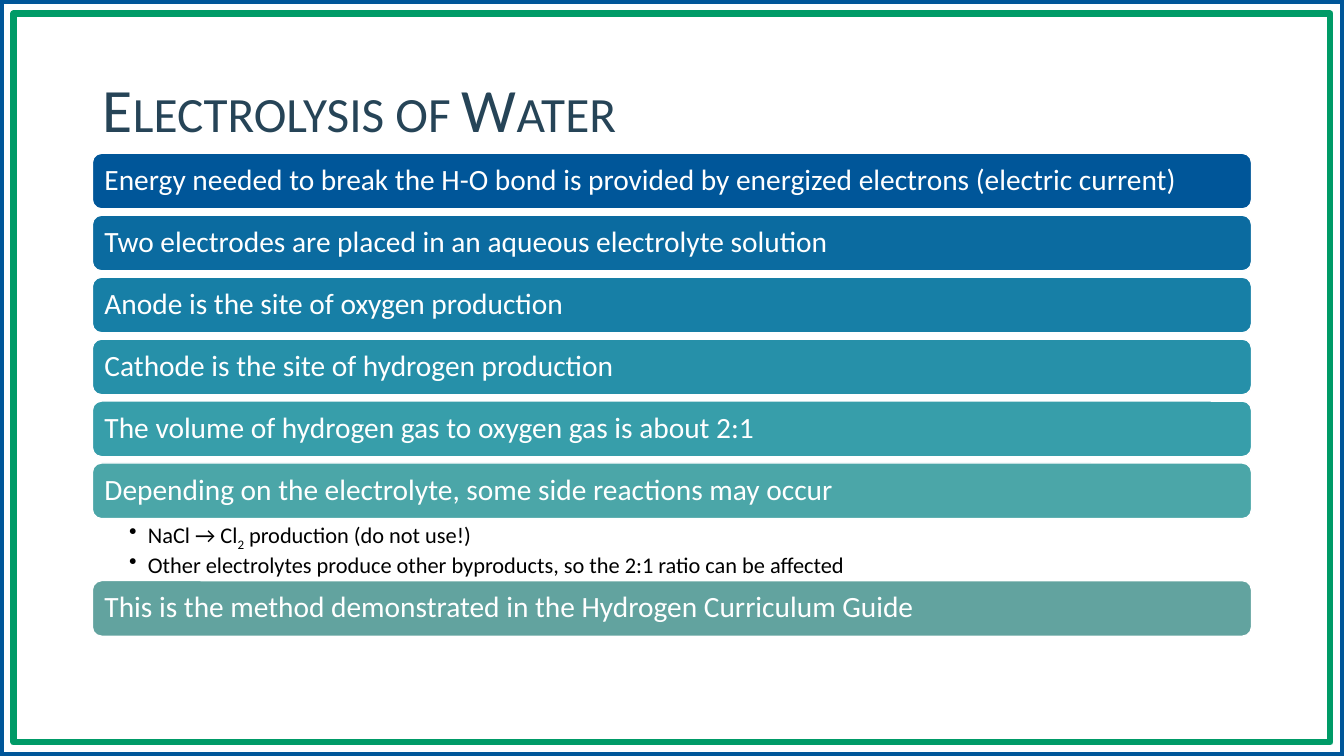
from lxml.etree import SubElement
from pptx import Presentation
from pptx.dml.color import RGBColor
from pptx.enum.shapes import MSO_SHAPE as Preset
from pptx.enum.text import MSO_ANCHOR as Anchor, MSO_AUTO_SIZE as AutoSize, PP_ALIGN as Align
from pptx.oxml.ns import qn
from pptx.util import Pt

PX = 9525
WIDTH, HEIGHT = 1280, 720
FONT = "Calibri"
BAR_HEIGHT, BAR_PITCH, BULLETS_HEIGHT = 53, 59, 59
STEPS = [
    ("Energy needed to break the H-O bond is provided by energized electrons (electric current)", "005699"),
    ("Two electrodes are placed in an aqueous electrolyte solution", "0B6BA0"),
    ("Anode is the site of oxygen production", "177FA6"),
    ("Cathode is the site of hydrogen production", "2690A9"),
    ("The volume of hydrogen gas to oxygen gas is about 2:1", "379EAA"),
    ("Depending on the electrolyte, some side reactions may occur", "4BA6A8"),
]
SIDE_REACTIONS = [
    [("NaCl → Cl", {}), ("2", {"baseline": -25000}), (" production (do not use!)", {})],
    [("Other electrolytes produce other byproducts, so the 2:1 ratio can be affected", {})],
]
CLOSING = ("This is the method demonstrated in the Hydrogen Curriculum Guide", "62A39F")


def px(*lengths):
    """Turn pixel lengths into EMU."""
    return [length * PX for length in lengths]


def color(value):
    """Turn a hex string into a colour."""
    return RGBColor.from_string(value)


def add_text(paragraph, text, size=21, fill="FFFFFF", **attributes):
    """Append a formatted run, with any extra run attributes."""
    paragraph.line_spacing = 0.9
    paragraph.alignment = Align.LEFT
    run = paragraph.add_run()
    run.text = text
    run.font.name = FONT
    run.font.size = Pt(size)
    run.font.color.rgb = color(fill)
    for name, value in attributes.items():
        run._r.get_or_add_rPr().set(name, str(value))


def set_frame(frame, insets, anchor):
    """Set wrapping, insets and anchor of a text frame."""
    frame.word_wrap = True
    frame.auto_size = AutoSize.NONE
    frame.vertical_anchor = anchor
    frame.margin_left, frame.margin_top, frame.margin_right, frame.margin_bottom = px(*insets)


def add_panel(slide, preset, box, line, line_width, fill=None):
    """Add an outlined shape, filled when a fill is given."""
    shape = slide.shapes.add_shape(preset, *px(*box))
    shape.shadow.inherit = False
    if fill:
        shape.fill.solid()
        shape.fill.fore_color.rgb = color(fill)
    else:
        shape.fill.background()
    shape.line.color.rgb = color(line)
    shape.line.width = Pt(line_width)
    return shape


def add_border(slide, box):
    """Draw the double border inside the given box."""
    left, top, width, height = box
    gap = 13
    inner = left + gap, top + gap, width - 2 * gap, height - 2 * gap
    add_panel(slide, Preset.RECTANGLE, box, "005699", 6)
    add_panel(slide, Preset.RECTANGLE, inner, "009B67", 4.5)


def add_title(slide, box, text):
    """Place and fill the title placeholder."""
    title = slide.shapes.title
    title.left, title.top, title.width, title.height = px(*box)
    set_frame(title.text_frame, (10, 5, 10, 5), Anchor.MIDDLE)
    add_text(title.text_frame.paragraphs[0], text, size=44, fill="264457", cap="small")


def add_bar(slide, box, text, fill):
    """Add one rounded bar with its statement."""
    bar = add_panel(slide, Preset.ROUNDED_RECTANGLE, box, "FFFFFF", 1, fill)
    set_frame(bar.text_frame, (9, 9, 9, 9), Anchor.MIDDLE)
    add_text(bar.text_frame.paragraphs[0], text)


def add_bullets(slide, box, items):
    """Add the bulleted details below a bar."""
    frame = slide.shapes.add_textbox(*px(*box)).text_frame
    set_frame(frame, (35, 3, 15, 3), Anchor.TOP)
    for index, runs in enumerate(items):
        paragraph = frame.add_paragraph() if index else frame.paragraphs[0]
        properties = paragraph._p.get_or_add_pPr()
        properties.set("marL", str(18 * PX))
        properties.set("indent", str(-18 * PX))
        SubElement(properties, qn("a:buChar")).set("char", "•")
        paragraph.space_after = Pt(3.2)
        for text, attributes in runs:
            add_text(paragraph, text, size=16, fill="000000", **attributes)


def add_steps(slide, box):
    """Stack the bars, the bullets and the closing bar in the box."""
    left, top, width = box
    for index, (text, fill) in enumerate(STEPS):
        add_bar(slide, (left, top + index * BAR_PITCH, width, BAR_HEIGHT), text, fill)
    bullets_top = top + (len(STEPS) - 1) * BAR_PITCH + BAR_HEIGHT
    add_bullets(slide, (left, bullets_top, width, BULLETS_HEIGHT), SIDE_REACTIONS)
    add_bar(slide, (left, bullets_top + BULLETS_HEIGHT, width, BAR_HEIGHT), *CLOSING)


def main():
    """Build and save the slide."""
    presentation = Presentation()
    presentation.slide_width, presentation.slide_height = px(WIDTH, HEIGHT)
    slide = presentation.slides.add_slide(presentation.slide_layouts[5])
    add_border(slide, (0, 0, WIDTH, HEIGHT))
    add_title(slide, (88, 38, 1104, 139), "Electrolysis of Water")
    add_steps(slide, (88, 146, 1104))
    presentation.save("out.pptx")


if __name__ == "__main__":
    main()
